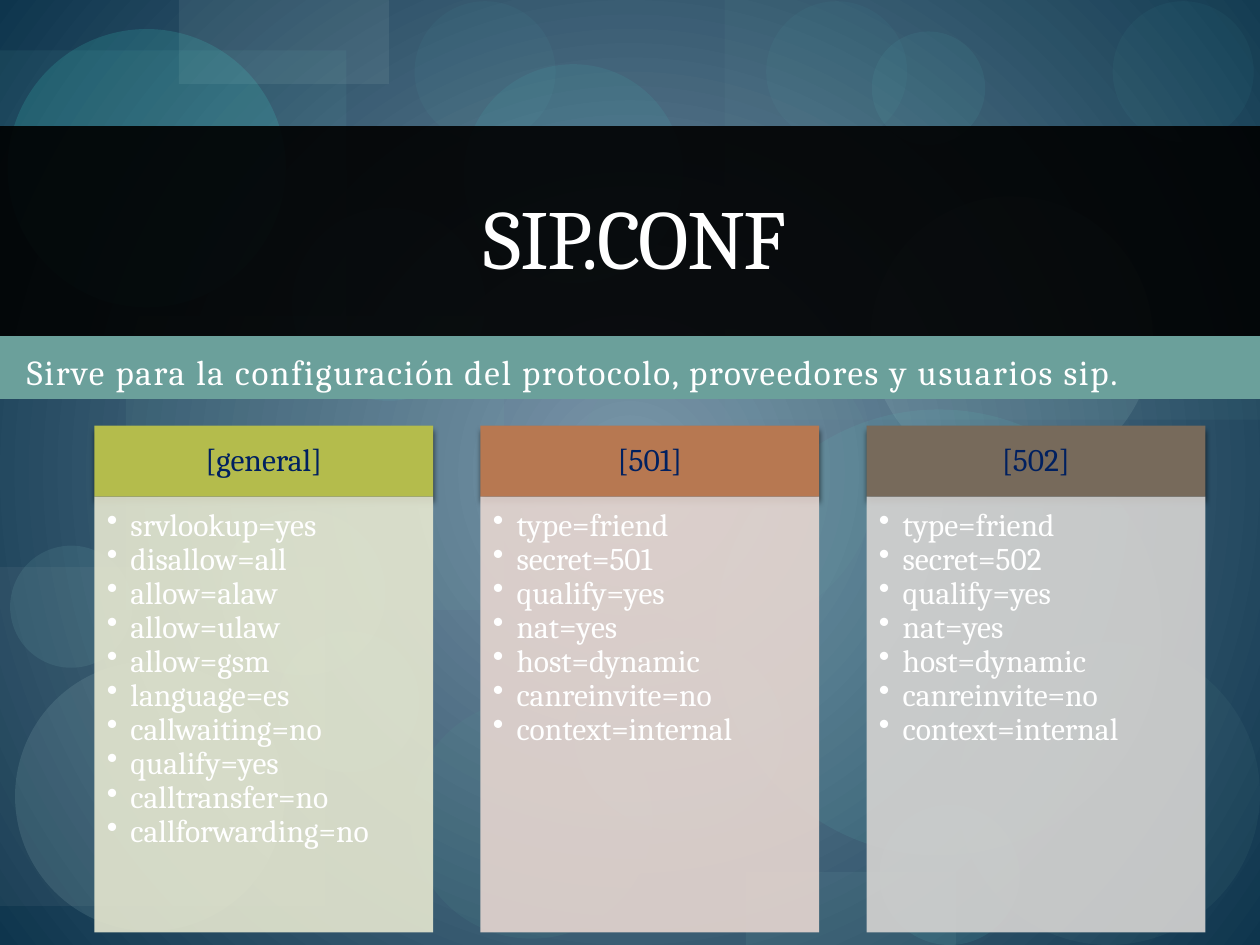
import lxml.etree
import pptx
import pptx.dml.color
import pptx.enum.shapes
import pptx.enum.text
import pptx.oxml.ns
import pptx.util

Pt = pptx.util.Pt
RGBColor = pptx.dml.color.RGBColor
MSO_SHAPE = pptx.enum.shapes.MSO_SHAPE
MSO_ANCHOR = pptx.enum.text.MSO_ANCHOR
PP_ALIGN = pptx.enum.text.PP_ALIGN
qn = pptx.oxml.ns.qn
SubElement = lxml.etree.SubElement

FONT = "Cambria"
WHITE = RGBColor(0xFF, 0xFF, 0xFF)
BLACK = RGBColor(0x00, 0x00, 0x00)
NAVY = RGBColor(0x00, 0x20, 0x60)
GLOW = RGBColor(0x7B, 0x96, 0xAA)
DEEP_BLUE = RGBColor(0x0E, 0x35, 0x4D)
BAND_TEAL = RGBColor(0x6B, 0xA0, 0x9B)
SEA = RGBColor(0x79, 0xB5, 0xB0)
PINE = RGBColor(0x54, 0x97, 0x91)
SILVER = RGBColor(0xB2, 0xB7, 0xBA)
SAGE = RGBColor(0x70, 0xA3, 0x9E)
AQUA = RGBColor(0x65, 0xE8, 0xDC)
ICE = RGBColor(0xC1, 0xE8, 0xE4)
BRIGHT = RGBColor(0x44, 0xEA, 0xDC)
MINT = RGBColor(0x77, 0xD6, 0xCE)
MIST = RGBColor(0xBE, 0xD7, 0xD4)
PALE_AQUA = RGBColor(0x97, 0xDC, 0xD6)
LAGOON = RGBColor(0x61, 0xCD, 0xC4)
OLIVE = RGBColor(0xB4, 0xBC, 0x4C)
PALE_OLIVE = RGBColor(0xE5, 0xE7, 0xD0)
CLAY = RGBColor(0xB7, 0x78, 0x51)
PALE_CLAY = RGBColor(0xE6, 0xD6, 0xD0)
BROWN = RGBColor(0x77, 0x6A, 0x5B)
PALE_BROWN = RGBColor(0xD6, 0xD4, 0xD2)

presentation = pptx.Presentation()
presentation.slide_width, presentation.slide_height = Pt(720), Pt(540)
slide = presentation.slides.add_slide(presentation.slide_layouts[5])


def add_filled(kind, left, top, width, height, color, opacity=100):
    """Add a borderless shape; opacity is in percent."""
    shape = slide.shapes.add_shape(kind, Pt(left), Pt(top), Pt(width), Pt(height))
    shape.fill.solid()
    shape.fill.fore_color.rgb = color
    shape.line.fill.background()
    shape.shadow.inherit = False
    if opacity < 100:
        color_element = shape.element.spPr.find(".//" + qn("a:srgbClr"))
        SubElement(color_element, qn("a:alpha"), val=str(opacity * 1000))
    return shape


def format_text(text_frame, size, color, alignment, anchor, margins, tracking=0):
    """Margins are left, top, right, bottom; tracking is in hundredths of a point."""
    text_frame.word_wrap = True
    text_frame.vertical_anchor = anchor
    (text_frame.margin_left, text_frame.margin_top,
     text_frame.margin_right, text_frame.margin_bottom) = map(Pt, margins)
    for paragraph in text_frame.paragraphs:
        paragraph.alignment = alignment
        for run in paragraph.runs:
            run.font.name = FONT
            run.font.size = Pt(size)
            run.font.color.rgb = color
            if tracking:
                run.font._element.set("spc", str(tracking))


# Radial background, light in the centre
fill = slide.background.fill
fill.gradient()
for stop, color in zip(fill.gradient_stops, (GLOW, DEEP_BLUE)):
    stop.color.rgb = color
fill.gradient_stops[0].position, fill.gradient_stops[1].position = 0, 1
gradient = slide.element.find(".//" + qn("a:gradFill"))
gradient.remove(gradient.find(qn("a:lin")))
radial = SubElement(gradient, qn("a:path"), path="circle")
SubElement(radial, qn("a:fillToRect"), l="50000", t="50000", r="50000", b="50000")

# Translucent circles and rectangles
RECT, OVAL = MSO_SHAPE.RECTANGLE, MSO_SHAPE.OVAL
decorations = [
    (RECT, 72, 180.7, 216, 167.8, SEA, 9),
    (OVAL, 234.7, 399.6, 138.2, 136.8, PINE, 13),
    (RECT, 414, 0, 306, 239.8, SEA, 6),
    (RECT, 0, 324, 185.8, 193.7, SILVER, 8),
    (OVAL, 329, 187.9, 171.4, 171.4, SAGE, 8),
    (OVAL, 502.6, 460, 80, 80, AQUA, 9),
    (OVAL, 497.5, 112.3, 161.3, 161.3, ICE, 11),
    (OVAL, 8.6, 378, 154, 154, ICE, 12),
    (OVAL, 159, 360.7, 80.6, 80.6, AQUA, 9),
    (OVAL, 328.3, 364.3, 119.5, 110.2, BRIGHT, 8),
    (RECT, 0, 28.8, 198, 188, MINT, 7),
    (RECT, 102.2, 0, 120, 48, MIST, 10),
    (OVAL, 4.3, 16.6, 159, 159, BRIGHT, 15),
    (OVAL, 5.8, 311.8, 69.8, 69.8, PALE_AQUA, 10),
    (OVAL, 167, 118.8, 110.2, 110.2, AQUA, 9),
    (OVAL, 265, 36.7, 125.3, 125.3, BRIGHT, 8),
    (OVAL, 409, 234, 254.9, 254.9, LAGOON, 10),
    (OVAL, 437.8, 0.7, 80.6, 80.6, AQUA, 4),
    (OVAL, 547.2, 367.2, 172.8, 172.8, SAGE, 8),
    (OVAL, 126, 291.6, 94.3, 94.3, PALE_AQUA, 10),
    (OVAL, 498.2, 18, 64.8, 64.8, AQUA, 6),
    (OVAL, 635.8, 0.7, 80.6, 80.6, AQUA, 4),
    (RECT, 426.2, 498.2, 120, 41.8, SEA, 10),
    (OVAL, 236.9, 0.7, 80.6, 80.6, AQUA, 4),
]
for decoration in decorations:
    add_filled(*decoration)

# Title and subtitle bands
add_filled(RECT, 0, 192, 720, 36, BAND_TEAL)
add_filled(RECT, 0, 72, 720, 120, BLACK, 90)

subtitle = slide.shapes.add_textbox(Pt(8.3), Pt(196.5), Pt(676), Pt(30))
subtitle.text_frame.text = (
    "Sirve para la configuración del protocolo, proveedores y usuarios sip.")
format_text(subtitle.text_frame, 20, WHITE, PP_ALIGN.LEFT, MSO_ANCHOR.TOP,
            (7.2, 3.6, 7.2, 3.6), 100)

title = slide.shapes.title
title.left, title.top, title.width, title.height = Pt(36), Pt(84), Pt(654), Pt(102)
title.text_frame.text = "SIP.CONF"
format_text(title.text_frame, 48, WHITE, PP_ALIGN.CENTER, MSO_ANCHOR.MIDDLE,
            (7.2, 3.6, 7.2, 3.6), -100)
title.element.getparent().append(title.element)  # in front of the bands

# One column per section of the configuration file
COLUMN_LEFT, COLUMN_PITCH, COLUMN_WIDTH = 54, 220.6, 193.6
HEADER_TOP, HEADER_HEIGHT, BODY_HEIGHT = 243.2, 40.6, 249


def phone_settings(extension):
    return ["type=friend", f"secret={extension}", "qualify=yes", "nat=yes",
            "host=dynamic", "canreinvite=no", "context=internal"]


general_settings = [
    "srvlookup=yes", "disallow=all", "allow=alaw", "allow=ulaw", "allow=gsm",
    "language=es", "callwaiting=no", "qualify=yes", "calltransfer=no",
    "callforwarding=no"]
sections = [
    ("[general]", general_settings, OLIVE, PALE_OLIVE),
    ("[501]", phone_settings(501), CLAY, PALE_CLAY),
    ("[502]", phone_settings(502), BROWN, PALE_BROWN),
]
for index, (name, settings, header_color, body_color) in enumerate(sections):
    left = COLUMN_LEFT + index * COLUMN_PITCH
    header = add_filled(RECT, left, HEADER_TOP, COLUMN_WIDTH, HEADER_HEIGHT, header_color)
    header.text_frame.text = name
    format_text(header.text_frame, 18, NAVY, PP_ALIGN.CENTER, MSO_ANCHOR.MIDDLE,
                (10, 5.8, 10, 5.8))
    header.text_frame.paragraphs[0].line_spacing = 0.9
    effects = header.element.spPr.find(qn("a:effectLst"))
    shadow = SubElement(effects, qn("a:outerShdw"), blurRad=str(Pt(3)), dist=str(Pt(3)),
                        dir="5400000", rotWithShape="0")
    shadow_color = SubElement(shadow, qn("a:srgbClr"), val=str(BLACK))
    SubElement(shadow_color, qn("a:alpha"), val="60000")

    body = add_filled(RECT, left, HEADER_TOP + HEADER_HEIGHT, COLUMN_WIDTH, BODY_HEIGHT,
                      body_color, 90)
    body.text_frame.text = "\n".join(settings)
    format_text(body.text_frame, 18, WHITE, PP_ALIGN.LEFT, MSO_ANCHOR.TOP,
                (7.2, 7.2, 10, 11.5))
    for paragraph in body.text_frame.paragraphs:
        paragraph.line_spacing = 0.9
        properties = paragraph._p.get_or_add_pPr()
        properties.set("marL", str(Pt(13.5)))
        properties.set("indent", str(Pt(-13.5)))
        SubElement(properties, qn("a:buChar"), char="•")

presentation.save("out.pptx")
